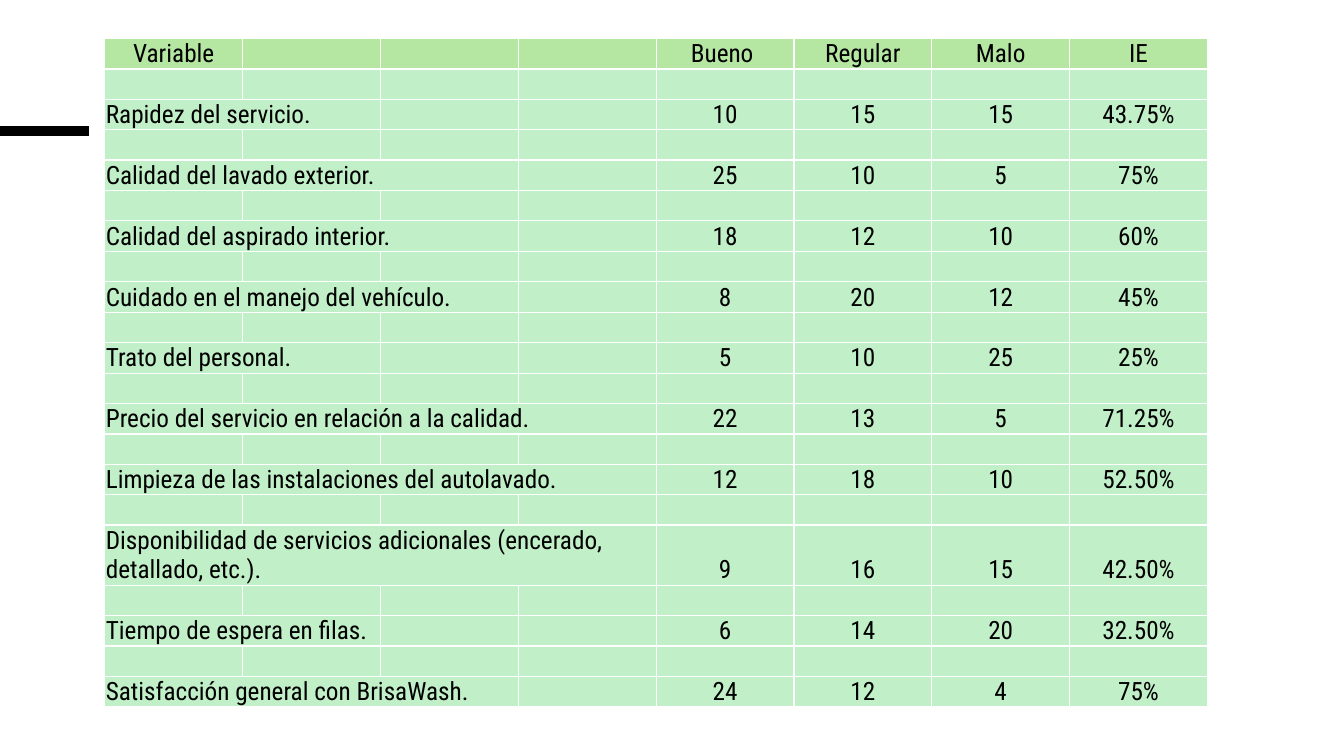
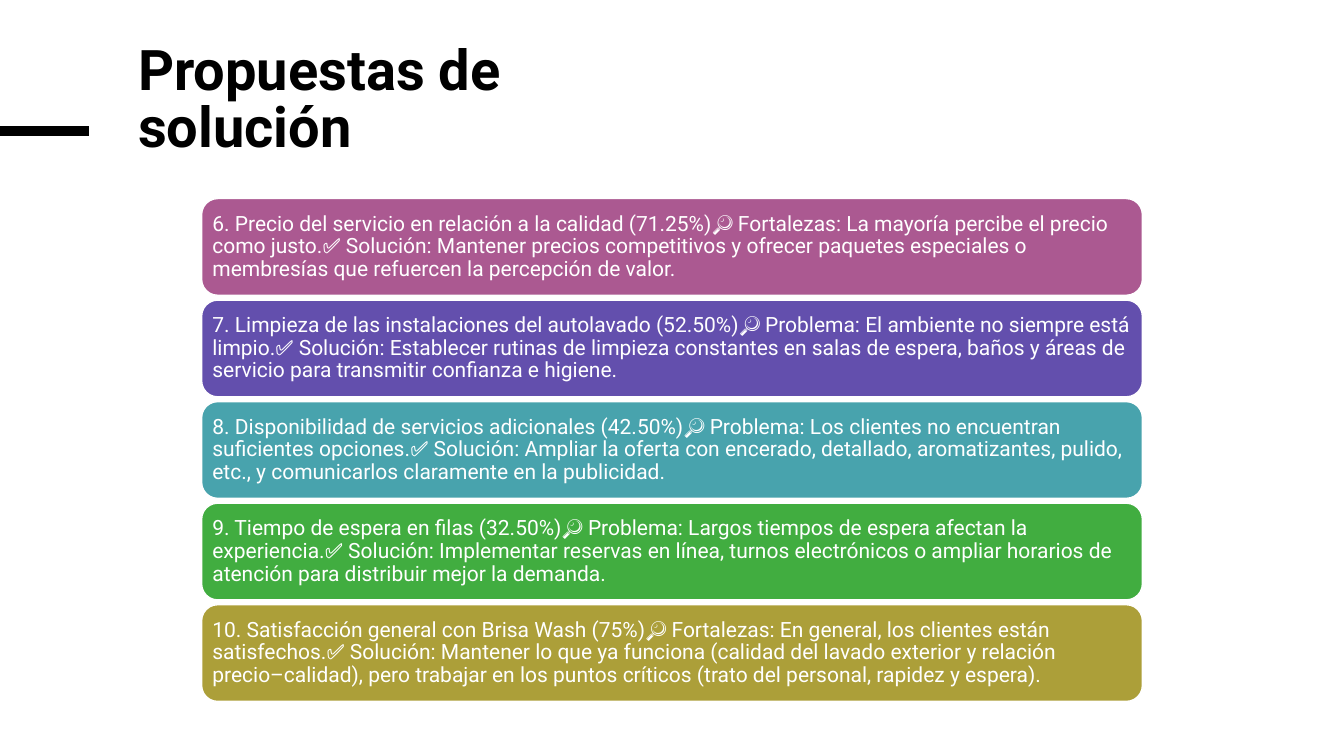
from lxml import etree
from pptx import Presentation
from pptx import util as u
from pptx.dml.color import RGBColor
from pptx.enum import shapes, text
from pptx.oxml.ns import qn

COLORS = {
    "ink": "000000", "paper": "FFFFFF",
    "head": "B5E6A2", "body": "C1F0C8",
    "plum": "AB5991", "violet": "634FAD", "teal": "48A3AD",
    "green": "41AD40", "ochre": "AC9F39",
}
TABLE_COLS, LABEL_COLS = 8, 4

HEADINGS = ["Variable", "Bueno ", "Regular", "Malo", "IE"]
# Label, merged columns, then the four figures
SURVEY = [
    ("Rapidez del servicio.", 2, 10, 15, 15, "43.75%"),
    ("Calidad del lavado exterior.", 3, 25, 10, 5, "75%"),
    ("Calidad del aspirado interior.", 3, 18, 12, 10, "60%"),
    ("Cuidado en el manejo del vehículo.", 3, 8, 20, 12, "45%"),
    ("Trato del personal.", 2, 5, 10, 25, "25%"),
    ("Precio del servicio en relación a la calidad.", 4, 22, 13, 5, "71.25%"),
    ("Limpieza de las instalaciones del autolavado.", 4, 12, 18, 10, "52.50%"),
    ("Disponibilidad de servicios adicionales (encerado, detallado, etc.).",
     4, 9, 16, 15, "42.50%"),
    ("Tiempo de espera en filas.", 2, 6, 14, 20, "32.50%"),
    ("Satisfacción general con BrisaWash.", 3, 24, 12, 4, "75%"),
]
TALL_ROW = 16

PROPOSALS = [
    ("plum", "6. Precio del servicio en relación a la calidad (71.25%)🔎 Fortalezas: "
     "La mayoría percibe el precio como justo.✅ Solución: Mantener precios competitivos "
     "y ofrecer paquetes especiales o membresías que refuercen la percepción de valor."),
    ("violet", "7. Limpieza de las instalaciones del autolavado (52.50%)🔎 Problema: "
     "El ambiente no siempre está limpio.✅ Solución: Establecer rutinas de limpieza "
     "constantes en salas de espera, baños y áreas de servicio para transmitir "
     "confianza e higiene."),
    ("teal", "8. Disponibilidad de servicios adicionales (42.50%)🔎 Problema: Los clientes "
     "no encuentran suficientes opciones.✅ Solución: Ampliar la oferta con encerado, "
     "detallado, aromatizantes, pulido, etc., y comunicarlos claramente en la publicidad."),
    ("green", "9. Tiempo de espera en filas (32.50%)🔎 Problema: Largos tiempos de espera "
     "afectan la experiencia.✅ Solución: Implementar reservas en línea, turnos "
     "electrónicos o ampliar horarios de atención para distribuir mejor la demanda."),
    ("ochre", "10. Satisfacción general con Brisa Wash (75%)🔎 Fortalezas: En general, los "
     "clientes están satisfechos.✅ Solución: Mantener lo que ya funciona (calidad del "
     "lavado exterior y relación precio–calidad), pero trabajar en los puntos críticos "
     "(trato del personal, rapidez y espera)."),
]


def rgb(name):
    return RGBColor.from_string(COLORS[name])


class Deck:
    """Shared style and the current slide, on a grid of 100 by 100."""

    def __init__(self):
        self.prs = Presentation()
        self.prs.slide_width, self.prs.slide_height = u.Inches(13.33), u.Inches(7.5)
        self.slide = None

    def x(self, cols):
        return int(self.prs.slide_width * cols / 100)

    def y(self, rows):
        return int(self.prs.slide_height * rows / 100)

    def box(self, left, top, width, height):
        return self.x(left), self.y(top), self.x(width), self.y(height)

    def style(self, p, size, color="ink", font="Roboto", bold=False):
        for r in p.runs:
            r.font.size, r.font.name, r.font.bold = u.Pt(size), font, bold
            r.font.color.rgb = rgb(color)

    def new_slide(self, title=None):
        layout = self.prs.slide_layouts[5 if title else 6]
        self.slide = self.prs.slides.add_slide(layout)
        self.accent_bar()
        if title:
            self.title(title)

    def accent_bar(self):
        bar = self.slide.shapes.add_connector(
            shapes.MSO_CONNECTOR.STRAIGHT, 0, self.y(17.33), self.x(6.6), self.y(17.33))
        bar.line.color.rgb, bar.line.width = rgb("ink"), u.Pt(6.75)
        etree.SubElement(bar._element.spPr, qn("a:effectLst"))

    def title(self, words):
        sp = self.slide.shapes.title
        sp.left, sp.top, sp.width, sp.height = self.box(9.53, 5.2, 30.9, 34.13)
        tf = sp.text_frame
        tf.text, tf.word_wrap = words, True
        tf.vertical_anchor = text.MSO_ANCHOR.TOP
        p = tf.paragraphs[0]
        p.alignment, p.line_spacing = text.PP_ALIGN.LEFT, 0.85
        self.style(p, 40, bold=True)

    def card(self, left, top, width, height, color, words):
        sp = self.slide.shapes.add_shape(
            shapes.MSO_SHAPE.ROUNDED_RECTANGLE, *self.box(left, top, width, height))
        sp.shadow.inherit = False
        sp.fill.solid()
        sp.fill.fore_color.rgb = rgb(color)
        sp.line.color.rgb, sp.line.width = rgb("paper"), u.Pt(1)
        tf = sp.text_frame
        tf.text, tf.word_wrap = words, True
        tf.vertical_anchor = text.MSO_ANCHOR.MIDDLE
        tf.margin_left = tf.margin_right = u.Inches(0.06)
        tf.margin_top = tf.margin_bottom = u.Inches(0.06)
        p = tf.paragraphs[0]
        p.alignment, p.line_spacing = text.PP_ALIGN.LEFT, 0.9
        self.style(p, 15, "paper")

    def table(self, left, top, width, row_heights):
        frame = self.slide.shapes.add_table(
            len(row_heights), TABLE_COLS, *self.box(left, top, width, sum(row_heights)))
        table = frame.table
        for column in table.columns:
            column.width = self.x(width / TABLE_COLS)
        for i, height in enumerate(row_heights):
            table.rows[i].height = self.y(height)
            for j in range(TABLE_COLS):
                self.blank_cell(table.cell(i, j), "body" if i else "head")
        return table

    def blank_cell(self, cell, color):
        cell.fill.solid()
        cell.fill.fore_color.rgb = rgb(color)
        cell.margin_left = cell.margin_right = cell.margin_top = u.Inches(0.01)
        cell.margin_bottom = 0
        cell.vertical_anchor = text.MSO_ANCHOR.BOTTOM
        # Small end mark, so that empty rows keep their height
        p = cell.text_frame.paragraphs[0]
        etree.SubElement(p._p, qn("a:endParaRPr"), sz="1200")

    def fill_cell(self, cell, words, align=text.PP_ALIGN.CENTER):
        p = cell.text_frame.paragraphs[0]
        p.text, p.alignment = str(words), align
        self.style(p, 18, font="Roboto Condensed")


def survey_slide(deck):
    deck.new_slide()
    # A blank row stands above each line of the survey
    heights = [4] * (1 + 2 * len(SURVEY))
    heights[TALL_ROW] = 7.87
    table = deck.table(7.8, 5.07, 82.05, heights)
    deck.fill_cell(table.cell(0, 0), HEADINGS[0])
    for j, heading in enumerate(HEADINGS[1:], LABEL_COLS):
        deck.fill_cell(table.cell(0, j), heading)
    for n, (label, span, *figures) in enumerate(SURVEY, 1):
        row = 2 * n
        table.cell(row, 0).merge(table.cell(row, span - 1))
        deck.fill_cell(table.cell(row, 0), label, text.PP_ALIGN.LEFT)
        for j, figure in enumerate(figures, LABEL_COLS):
            deck.fill_cell(table.cell(row, j), figure)


def proposals_slide(deck):
    deck.new_slide("Propuestas de solución")
    for n, (color, words) in enumerate(PROPOSALS):
        deck.card(15, 26.27 + 13.43 * n, 70, 12.8, color, words)


def main():
    deck = Deck()
    survey_slide(deck)
    proposals_slide(deck)
    deck.prs.save("out.pptx")


if __name__ == "__main__":
    main()
